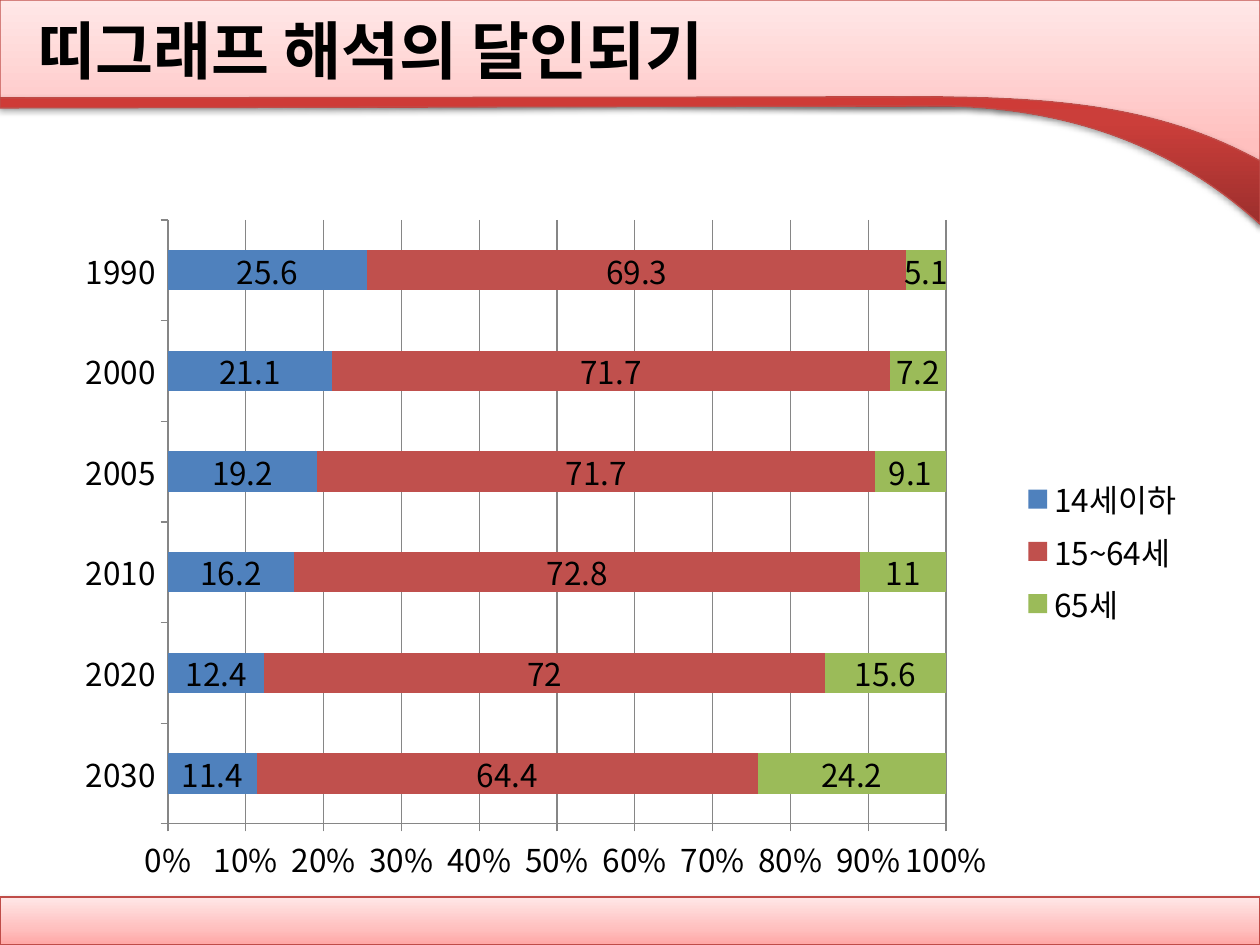
from dataclasses import dataclass

from lxml import etree
from pptx import Presentation
from pptx import util as u
from pptx.chart import data as cdata
from pptx.dml.color import RGBColor
from pptx.enum import chart as ch, shapes, text
from pptx.oxml import ns

PX = 914400 / 126  # EMU in one px
FONT = "Noto Sans CJK KR"
BLACK = RGBColor(0, 0, 0)
GREY = RGBColor(0x86, 0x86, 0x86)
EDGE = RGBColor(0xBF, 0x4C, 0x48)
BLUE = RGBColor(0x4F, 0x81, 0xBD)
RED = RGBColor(0xC0, 0x50, 0x4D)
GREEN = RGBColor(0x9B, 0xBB, 0x59)
PALE = ((0, "FFA6A5"), (35, "FFC0BF"), (100, "FFE7E7"))
DEEP = ((0, "9C2F2D"), (80, "CB3E3A"), (100, "CE3B37"))


@dataclass
class Band:
    """A filled outline: each step is a point, or three points of a curve."""
    steps: tuple
    stops: tuple
    alpha: int
    dist: float


@dataclass
class Group:
    name: str
    vals: tuple
    color: RGBColor


BANDS = (
    Band(((0, 0), (1260, 0), (1260, 224),
          ((1220, 180), (1172, 106), (948, 106)), (0, 101)), PALE, 38, 1.6),
    Band(((0, 98), (888, 97), ((1045, 96), (1154, 103), (1260, 161)),
          (1260, 224), ((1203, 173), (1110, 110), (949, 106)), (0, 108)),
         DEEP, 35, 1.8),
)
YEARS = ("2030", "2020", "2010", "2005", "2000", "1990")
GROUPS = (
    Group("14세이하", (11.4, 12.4, 16.2, 19.2, 21.1, 25.6), BLUE),
    Group("15~64세", (64.4, 72, 72.8, 71.7, 71.7, 69.3), RED),
    Group("65세", (24.2, 15.6, 11, 9.1, 7.2, 5.1), GREEN),
)


def emu(*px: int) -> list[int]:
    return [round(n * PX) for n in px]


def style(obj, **vals) -> None:
    for key, val in vals.items():
        setattr(obj, key, val)


def sub(node, tag: str, **attrs):
    return etree.SubElement(node, ns.qn(tag), attrs)


def asian(node) -> None:
    """Give East Asian text the same face as Latin text."""
    for latin in list(node.iter(ns.qn("a:latin"))):
        face = etree.Element(ns.qn("a:ea"), {"typeface": FONT})
        latin.addnext(face)


def paint(shape, stops: tuple, alpha: int, dist: float) -> None:
    shape.fill.gradient()
    shape.fill.gradient_angle = 90
    ramp = next(shape.element.iter(ns.qn("a:gsLst")))
    for old in list(ramp):
        ramp.remove(old)
    for pos, color in stops:
        sub(sub(ramp, "a:gs", pos=str(pos * 1000)), "a:srgbClr", val=color)
    shape.line.color.rgb = EDGE
    shape.line.width = u.Pt(0.75)
    # Soft shadow straight below
    shape.shadow.inherit = False
    glow = next(shape.element.iter(ns.qn("a:effectLst")))
    shade = sub(glow, "a:outerShdw", blurRad=str(u.Pt(3.1)),
                dist=str(u.Pt(dist)), dir="5400000", rotWithShape="0")
    tint = sub(shade, "a:srgbClr", val="000000")
    sub(tint, "a:alpha", val=str(alpha * 1000))


def draw_band(slide, band: Band) -> None:
    knots = [s if isinstance(s[0], tuple) else (s,) for s in band.steps]
    pts = [p for knot in knots for p in knot]
    pen = slide.shapes.build_freeform(*pts[0], scale=PX)
    pen.add_line_segments(pts[1:], close=True)
    shape = pen.convert_to_shape()
    # Join each run of three points into one curve
    lines = iter(list(shape.element.iter(ns.qn("a:lnTo"))))
    for knot in knots[1:]:
        parts = [next(lines) for _ in knot]
        if len(parts) == 3:
            curve = etree.Element(ns.qn("a:cubicBezTo"))
            parts[0].addprevious(curve)
            for part in parts:
                curve.append(part[0])
                part.getparent().remove(part)
    paint(shape, band.stops, band.alpha, band.dist)


def draw_foot(slide) -> None:
    foot = slide.shapes.add_shape(shapes.MSO_SHAPE.RECTANGLE,
                                  *emu(0, 897, 1260, 48))
    paint(foot, PALE, 38, 1.6)


def draw_title(slide, words: str) -> None:
    box = slide.shapes.add_textbox(*emu(25, 6, 1134, 87))
    frame = box.text_frame
    style(frame, word_wrap=True, vertical_anchor=text.MSO_ANCHOR.MIDDLE)
    run = frame.paragraphs[0].add_run()
    run.text = words
    style(run.font, size=u.Pt(36), bold=True, name=FONT)
    run.font.color.rgb = BLACK


def draw_chart(slide) -> None:
    data = cdata.CategoryChartData()
    data.categories = YEARS
    for group in GROUPS:
        data.add_series(group.name, group.vals)
    chart = slide.shapes.add_chart(ch.XL_CHART_TYPE.BAR_STACKED_100,
                                   *emu(63, 207, 1134, 689), data).chart
    style(chart, has_title=False, has_legend=True)
    style(chart.font, size=u.Pt(18), name=FONT)
    chart.font.color.rgb = BLACK
    style(chart.legend, position=ch.XL_LEGEND_POSITION.RIGHT,
          include_in_layout=False)

    # Bars and their values
    plot = chart.plots[0]
    style(plot, gap_width=150, overlap=100, vary_by_categories=False)
    for series, group in zip(plot.series, GROUPS):
        series.format.fill.solid()
        series.format.fill.fore_color.rgb = group.color
        series.data_labels.show_value = True

    # Axes and grid
    rule = chart.value_axis
    style(rule, has_major_gridlines=True, maximum_scale=1, minimum_scale=0,
          major_unit=0.1)
    style(rule.tick_labels, number_format="0%", number_format_is_linked=False)
    for axis in (rule, chart.category_axis):
        style(axis, major_tick_mark=ch.XL_TICK_MARK.OUTSIDE,
              minor_tick_mark=ch.XL_TICK_MARK.NONE)
        axis.format.line.color.rgb = GREY
    rule.major_gridlines.format.line.color.rgb = GREY

    # Fixed place of the plot inside the chart
    area = next(chart.element.iter(ns.qn("c:plotArea")))
    for old in area.findall(ns.qn("c:layout")):
        area.remove(old)
    layout = etree.Element(ns.qn("c:layout"))
    area.insert(0, layout)
    spot = sub(layout, "c:manualLayout")
    sub(spot, "c:layoutTarget", val="inner")
    for key in ("xMode", "yMode"):
        sub(spot, f"c:{key}", val="edge")
    sizes = {"x": 105 / 1134, "y": 13 / 689, "w": 778 / 1134, "h": 604 / 689}
    for key, val in sizes.items():
        sub(spot, f"c:{key}", val=f"{val:.4f}")
    asian(chart.element)


def main() -> None:
    deck = Presentation()
    wide, high = emu(1260, 945)
    style(deck, slide_width=wide, slide_height=high)
    slide = deck.slides.add_slide(deck.slide_layouts[6])
    draw_foot(slide)
    for band in BANDS:
        draw_band(slide, band)
    draw_title(slide, "띠그래프 해석의 달인되기")
    draw_chart(slide)
    deck.save("out.pptx")


if __name__ == "__main__":
    main()
